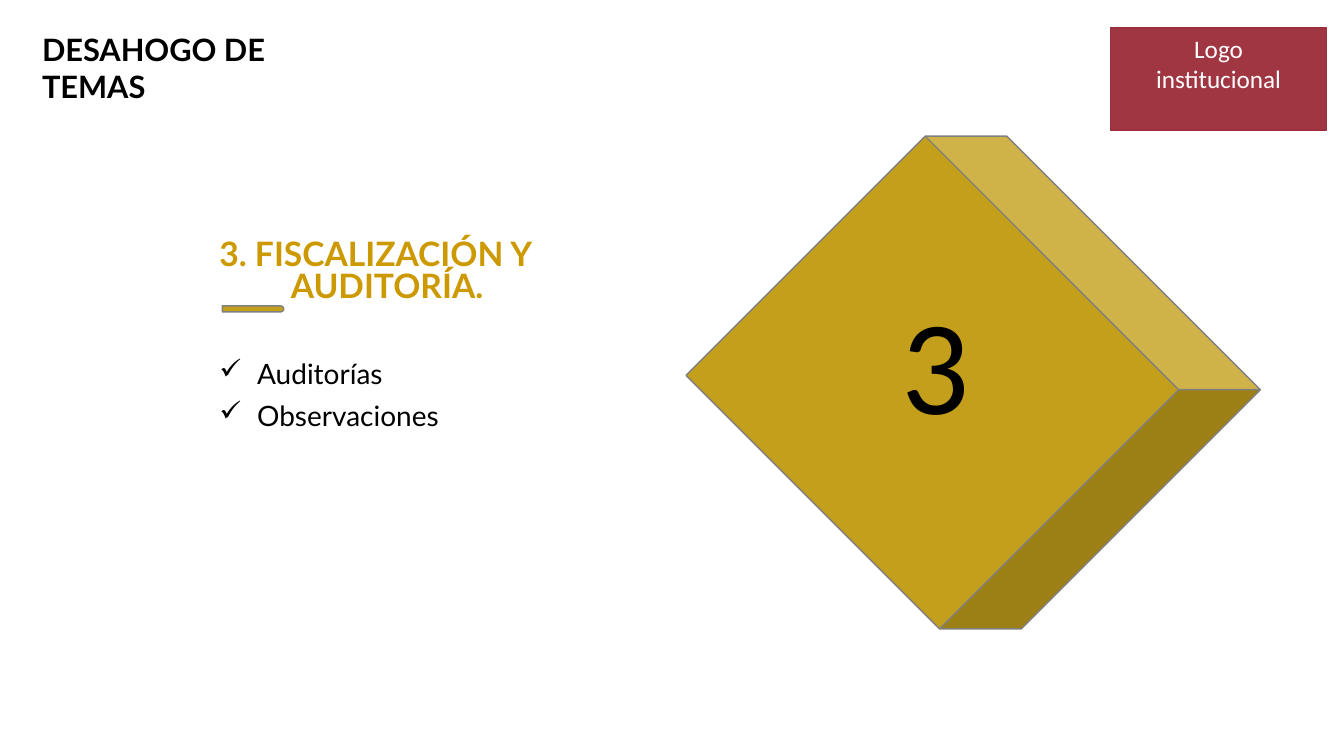
import dataclasses

import pptx
import pptx.dml.color
import pptx.enum.shapes
import pptx.enum.text
import pptx.util
from lxml import etree
from pptx.oxml.ns import qn
from pptx.util import Cm

SHAPES = pptx.enum.shapes.MSO_SHAPE
ALIGN = pptx.enum.text.PP_ALIGN


@dataclasses.dataclass(frozen=True)
class Theme:
    gold: str = "C39F1B"
    heading: str = "CC9900"
    wine: str = "9D2E3B"
    outline: str = "808080"
    black: str = "000000"
    white: str = "FFFFFF"
    text_font: str = "Lato"
    plain_font: str = "Calibri"
    label_size: int = 18
    list_size: int = 20
    title_size: int = 22
    heading_size: int = 24
    number_size: int = 96


THEME = Theme()


def rgb(color):
    return pptx.dml.color.RGBColor.from_string(color)


def write_text(shape, text, size, color, font=THEME.text_font, bold=False,
               align=ALIGN.LEFT, line_spacing=1.0):
    frame = shape.text_frame
    frame.text = text
    frame.word_wrap = True
    frame.vertical_anchor = pptx.enum.text.MSO_ANCHOR.TOP
    for paragraph in frame.paragraphs:
        paragraph.alignment = align
        paragraph.line_spacing = line_spacing
        for run in paragraph.runs:
            run.font.name = font
            run.font.size = pptx.util.Pt(size)
            run.font.bold = bold
            run.font.color.rgb = rgb(color)
    return frame.paragraphs


def add_text(slide, box, text, size, color, **style):
    shape = slide.shapes.add_textbox(*map(Cm, box))
    return write_text(shape, text, size, color, **style)


def add_block(slide, kind, box, fill, line, rotation=0, adjustments=()):
    shape = slide.shapes.add_shape(kind, *map(Cm, box))
    shape.shadow.inherit = False
    shape.rotation = rotation
    for index, value in enumerate(adjustments):
        shape.adjustments[index] = value
    shape.fill.solid()
    shape.fill.fore_color.rgb = rgb(fill)
    shape.line.color.rgb = rgb(line)
    shape.line.width = pptx.util.Pt(1)
    return shape


def set_indent(paragraph, left, first=0):
    properties = paragraph._p.get_or_add_pPr()
    properties.set("marL", str(Cm(left)))
    properties.set("indent", str(Cm(first)))
    return properties


def add_check_bullet(paragraph):
    properties = set_indent(paragraph, 0.95, -0.95)
    etree.SubElement(properties, qn("a:buChar")).set("char", "✓")


def set_opacity(shape, percent):
    color = shape.fill._xPr.find(qn("a:solidFill"))[0]
    etree.SubElement(color, qn("a:alpha")).set("val", str(percent * 1000))


def main():
    presentation = pptx.Presentation()
    presentation.slide_width = Cm(33.87)
    presentation.slide_height = Cm(19.05)
    slide = presentation.slides.add_slide(presentation.slide_layouts[6])

    # Topic heading, with its second line set in
    heading = add_text(slide, (5.28, 5.94, 9.1, 1.93),
                       "3. FISCALIZACIÓN Y\nAUDITORÍA.",
                       THEME.heading_size, THEME.heading, bold=True,
                       line_spacing=0.8)
    set_indent(heading[1], 1.8)

    # Checklist
    for item in add_text(slide, (5.28, 8.66, 9.78, 2.31),
                         "Auditorías\nObservaciones",
                         THEME.list_size, THEME.black, line_spacing=1.25):
        add_check_bullet(item)

    # Numbered cube and heading accent
    add_block(slide, SHAPES.CUBE, (19.28, 4.65, 10.49, 9.98),
              THEME.gold, THEME.outline, 45, [0.146])
    add_text(slide, (21.34, 7.72, 4.47, 3.63), "3", THEME.number_size,
             THEME.black, font=THEME.plain_font, align=ALIGN.CENTER,
             line_spacing=0.8)
    add_block(slide, SHAPES.ROUND_2_SAME_RECTANGLE, (6.3, 7.01, 0.15, 1.55),
              THEME.gold, THEME.outline, 90, [0.5, 0])

    # Slide title
    add_text(slide, (0.81, 0.64, 7.8, 2.1), "DESAHOGO DE\vTEMAS",
             THEME.title_size, THEME.black, bold=True)

    # Label block
    label = add_block(slide, SHAPES.RECTANGLE, (27.99, 0.71, 5.44, 2.57),
                      THEME.wine, THEME.wine)
    set_opacity(label, 96)
    write_text(label, "Logo\ninstitucional", THEME.label_size, THEME.white,
               font=THEME.plain_font, align=ALIGN.CENTER)

    presentation.save("out.pptx")


if __name__ == "__main__":
    main()
